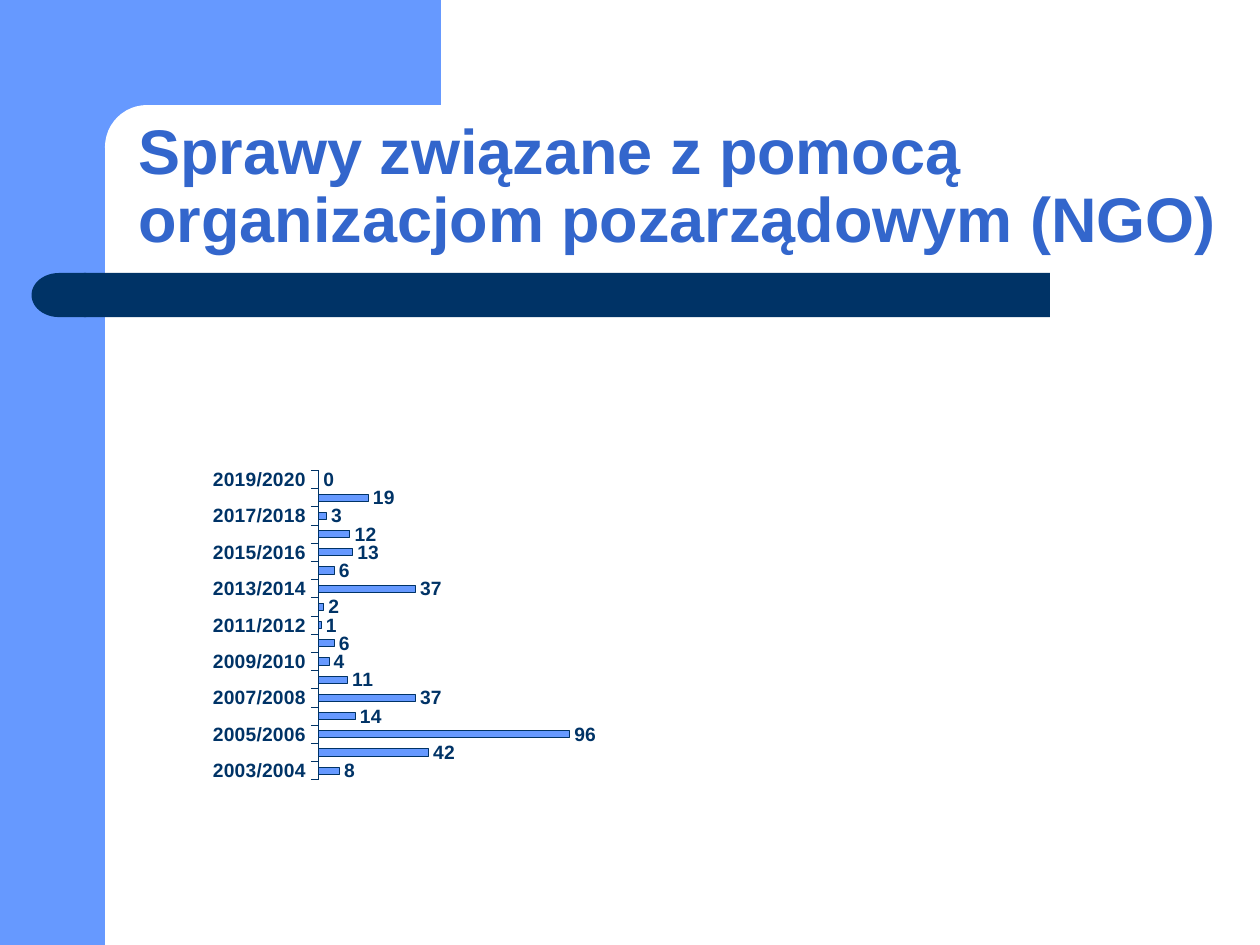
import pptx
import pptx.chart.data
import pptx.dml.color
import pptx.enum.chart
import pptx.enum.shapes
import pptx.enum.text
import pptx.oxml
import pptx.oxml.ns
import pptx.util

PX = 7620  # EMU per px, 120 px to the inch
WIDE, HIGH = 1200, 900
FONT = "Arial"
SKY = pptx.dml.color.RGBColor(0x66, 0x99, 0xFF)
NAVY = pptx.dml.color.RGBColor(0x00, 0x33, 0x66)
BLUE = pptx.dml.color.RGBColor(0x33, 0x66, 0xCC)
WHITE = pptx.dml.color.RGBColor(0xFF, 0xFF, 0xFF)
KIND = pptx.enum.shapes.MSO_SHAPE

TITLE = "Sprawy związane z pomocą organizacjom pozarządowym (NGO)"
START = 2003
CASES = [8, 42, 96, 14, 37, 11, 4, 6, 1, 2, 37, 6, 13, 12, 3, 19, 0]
PLOT = {"x": 0.283, "y": 0.078, "w": 0.575, "h": 0.857}


def emu(*box):
    return [n * PX for n in box]


def add_block(slide, kind, box, color):
    shape = slide.shapes.add_shape(kind, *emu(*box))
    shape.shadow.inherit = False
    shape.fill.solid()
    shape.fill.fore_color.rgb = color
    shape.line.fill.background()
    return shape


def set_font(font, size, color):
    font.name = FONT
    font.size = pptx.util.Pt(size)
    font.bold = True
    font.color.rgb = color


def add_frame(slide, x, y, w, h):
    # Blue corner with the rounded white panel cut into it
    side = 100
    add_block(slide, KIND.RECTANGLE, (x, y, side, h), SKY)
    add_block(slide, KIND.RECTANGLE, (x + side - 10, y, 330, 140), SKY)
    panel = add_block(slide, KIND.ROUNDED_RECTANGLE,
                      (x + side, y + 100, 670, 80), WHITE)
    panel.adjustments[0] = 0.5


def add_rule(slide, x, y, w, h):
    # Dark bar with a round left end
    cap = 52
    add_block(slide, KIND.RECTANGLE, (x + cap - 2, y, w - cap + 2, h), NAVY)
    end = add_block(slide, KIND.FLOWCHART_DELAY, (x, y, cap, h), NAVY)
    end.rotation = 180


def add_title(slide, x, y, w, h):
    frame = slide.shapes.add_textbox(*emu(x, y, w, h)).text_frame
    frame.word_wrap = True
    frame.vertical_anchor = pptx.enum.text.MSO_ANCHOR.BOTTOM
    frame.text = TITLE
    para = frame.paragraphs[0]
    para.line_spacing = 0.9
    set_font(para.runs[0].font, 36, BLUE)


def set_plot(chart):
    # Fixed inner plot area, as shares of the chart box
    area = chart._chartSpace.chart.plotArea
    for old in area.findall(pptx.oxml.ns.qn("c:layout")):
        area.remove(old)
    parts = "".join(f'<c:{k} val="{v}"/>' for k, v in PLOT.items())
    area.insert(0, pptx.oxml.parse_xml(
        f'<c:layout {pptx.oxml.ns.nsdecls("c")}><c:manualLayout>'
        '<c:layoutTarget val="inner"/><c:xMode val="edge"/>'
        f'<c:yMode val="edge"/>{parts}</c:manualLayout></c:layout>'))


def add_bars(slide, x, y, w, h):
    data = pptx.chart.data.CategoryChartData()
    years = range(START, START + len(CASES))
    data.categories = [f"{year}/{year + 1}" for year in years]
    data.add_series("Series 1", CASES)
    chart = slide.shapes.add_chart(
        pptx.enum.chart.XL_CHART_TYPE.BAR_CLUSTERED, *emu(x, y, w, h), data).chart
    chart.has_legend = False
    chart.has_title = False
    set_font(chart.font, 11, NAVY)
    set_plot(chart)

    # Axes
    axis = chart.category_axis
    axis.major_tick_mark = pptx.enum.chart.XL_TICK_MARK.OUTSIDE
    set_font(axis.tick_labels.font, 11, NAVY)
    axis.format.line.color.rgb = NAVY
    axis.format.line.width = pptx.util.Pt(0.18)
    skip = pptx.oxml.parse_xml(
        f'<c:tickLblSkip {pptx.oxml.ns.nsdecls("c")} val="1"/>')
    axis._element.find(pptx.oxml.ns.qn("c:noMultiLvlLbl")).addprevious(skip)
    scale = chart.value_axis
    scale.minimum_scale, scale.maximum_scale = 0, 120
    scale.has_major_gridlines = False
    scale.visible = False

    # Bars and their values
    plot = chart.plots[0]
    plot.gap_width = 150
    plot.vary_by_categories = False
    bars = plot.series[0]
    bars.format.fill.solid()
    bars.format.fill.fore_color.rgb = SKY
    bars.format.line.color.rgb = NAVY
    bars.format.line.width = pptx.util.Pt(0.25)
    tags = bars.data_labels
    tags.show_value = True
    tags.position = pptx.enum.chart.XL_LABEL_POSITION.OUTSIDE_END
    set_font(tags.font, 11, NAVY)


def main():
    deck = pptx.Presentation()
    deck.slide_width, deck.slide_height = emu(WIDE, HIGH)
    slide = deck.slides.add_slide(deck.slide_layouts[6])
    add_frame(slide, 0, 0, WIDE, HIGH)
    add_rule(slide, 30, 260, 970, 42)
    add_title(slide, 120, 100, 1080, 150)
    add_bars(slide, 156, 421, 520, 344)
    deck.save("out.pptx")


if __name__ == "__main__":
    main()
